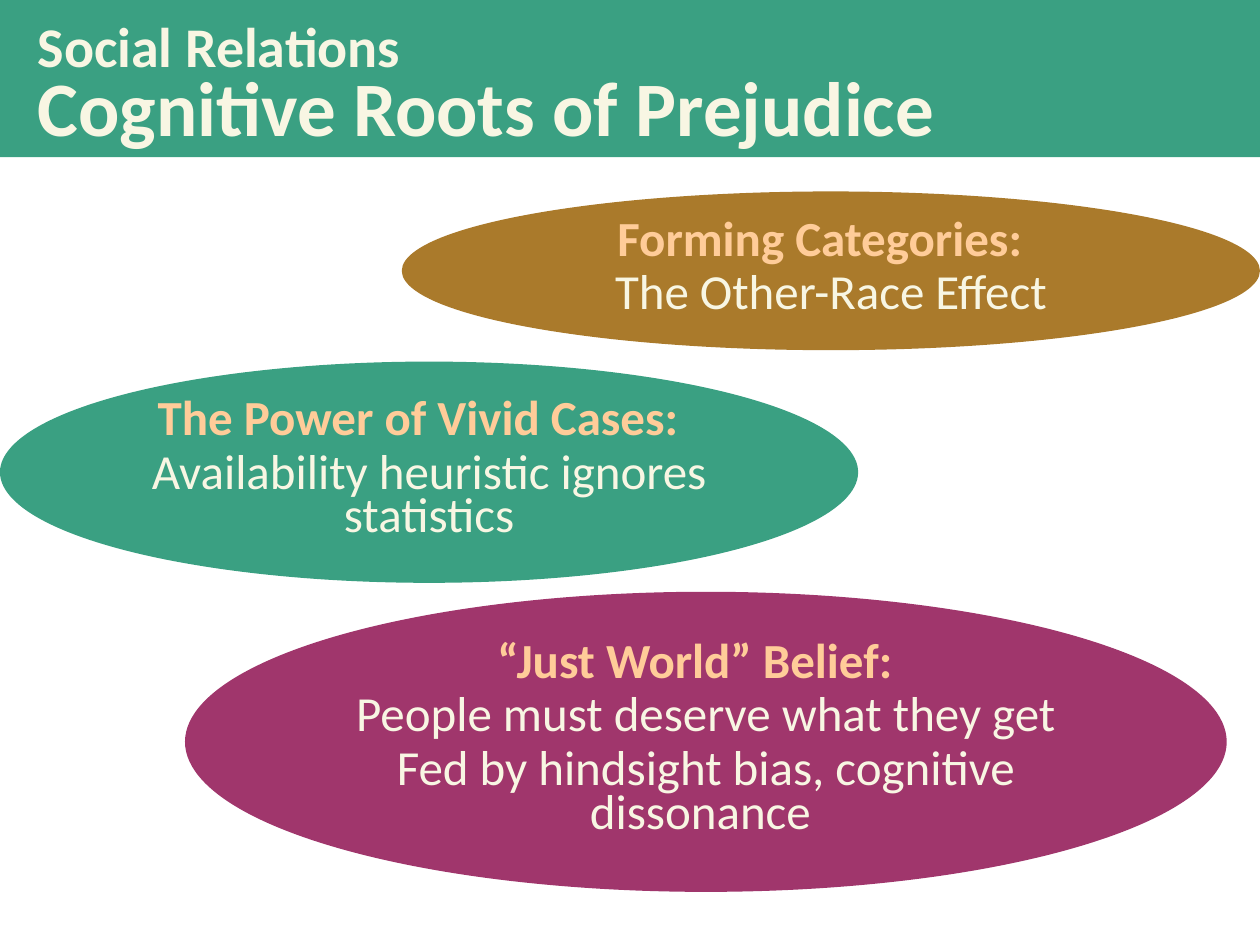
"""Build the slide on the cognitive roots of prejudice."""
import pptx
import pptx.util
import pptx.dml.color
import pptx.enum.shapes
import pptx.enum.text

Cm, Pt = pptx.util.Cm, pptx.util.Pt
MSO_SHAPE = pptx.enum.shapes.MSO_SHAPE
COLORS = {"green": "3AA082", "brown": "AA7A2B", "plum": "A0366C",
          "cream": "F8F6E3", "peach": "FFCC99"}


def add_block(s, kind, box, fill):
    sp = s.shapes.add_shape(kind, *[Cm(v) for v in box])
    sp.shadow.inherit = False
    sp.fill.solid()
    sp.fill.fore_color.rgb = pptx.dml.color.RGBColor.from_string(COLORS[fill])
    sp.line.fill.background()
    sp.text_frame.word_wrap = True
    sp.text_frame.vertical_anchor = pptx.enum.text.MSO_ANCHOR.MIDDLE
    return sp


def format_run(r, size, color, bold):
    r.font.name = "Calibri"
    r.font.size = Pt(size)
    r.font.bold = bold
    r.font.color.rgb = pptx.dml.color.RGBColor.from_string(COLORS[color])


prs = pptx.Presentation()
prs.slide_width, prs.slide_height = Cm(25.4), Cm(19.05)
s = prs.slides.add_slide(prs.slide_layouts[6])

sp = add_block(s, MSO_SHAPE.RECTANGLE, (0, 0, 25.4, 3.17), "green")
tf = sp.text_frame
tf.margin_left = Cm(0.76)
tf.text = "Social Relations\vCognitive Roots of Prejudice"
p = tf.paragraphs[0]
p.alignment = pptx.enum.text.PP_ALIGN.LEFT
p.line_spacing = Pt(42)
for r, size in zip(p.runs, (32, 44)):
    format_run(r, size, "cream", True)

ovals = [
    ((8.1, 3.86, 17.3, 3.2), "brown",
     ["Forming Categories:", "The Other-Race Effect"]),
    ((0, 7.29, 17.3, 4.46), "green",
     ["The Power of Vivid Cases:", "Availability heuristic ignores statistics"]),
    ((3.73, 11.93, 21, 6.05), "plum",
     ["“Just World” Belief:", "People must deserve what they get",
      "Fed by hindsight bias, cognitive dissonance "]),
]
for box, fill, lines in ovals:
    tf = add_block(s, MSO_SHAPE.OVAL, box, fill).text_frame
    tf.text = "\n".join(lines)
    for i, p in enumerate(tf.paragraphs):
        p.alignment = pptx.enum.text.PP_ALIGN.CENTER
        p.line_spacing = Pt(25)
        p.space_before = Pt(5.6)
        p._p.get_or_add_pPr().set("marR", str(Cm(0 if i else 0.45)))
        format_run(p.runs[0], 28, "cream" if i else "peach", i == 0)

prs.save("out.pptx")
